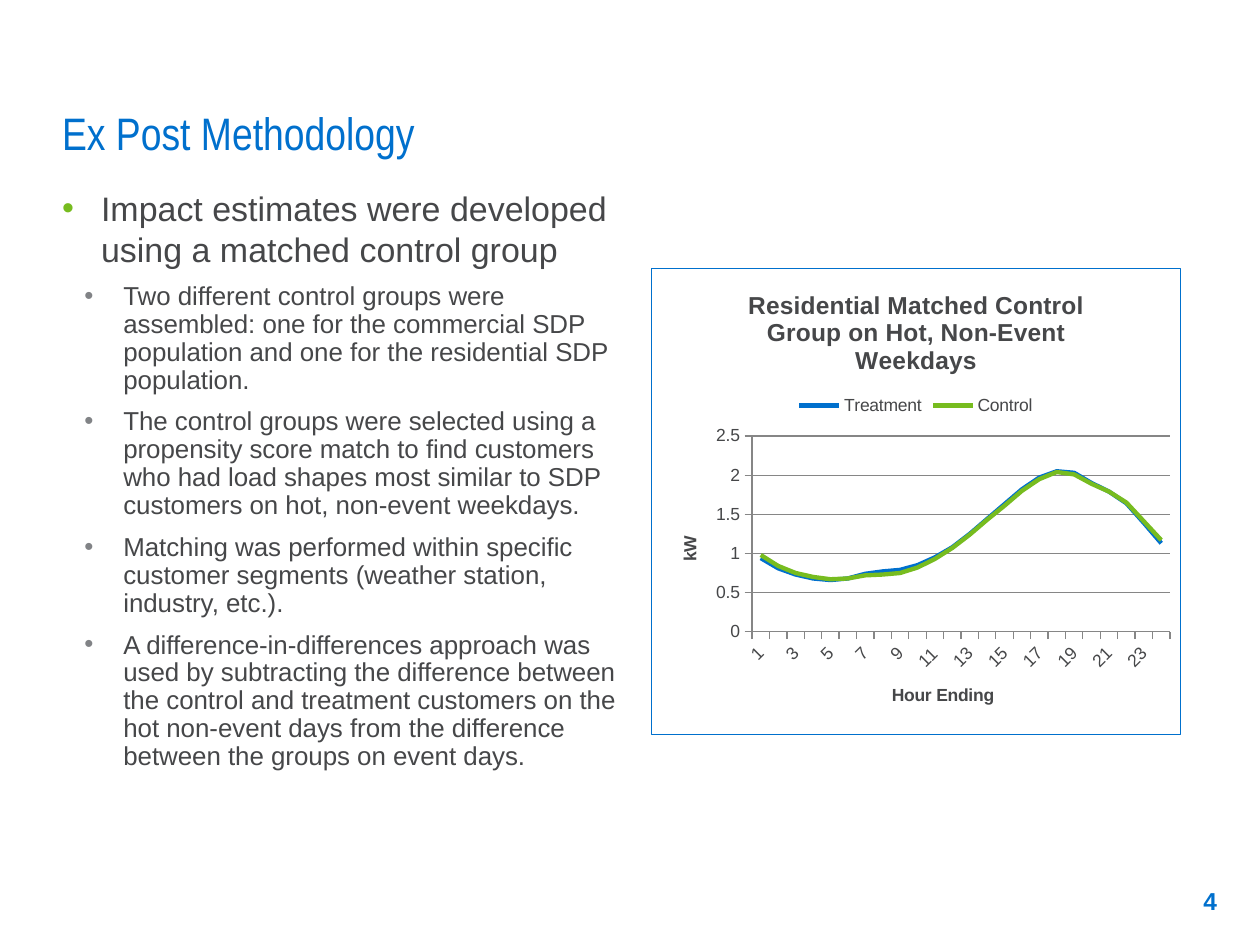
from lxml import etree
from pptx import Presentation
from pptx import util as u
from pptx.chart.data import CategoryChartData
from pptx.dml.color import RGBColor
from pptx.enum import chart as charts, text
from pptx.oxml import parse_xml
from pptx.oxml.ns import nsdecls, qn

Pt = u.Pt
COLORS = {"blue": "0070CD", "green": "77BC1F", "text": "464749",
          "bullet": "818386", "grid": "868686"}


def style(font, size, color, name="Arial", bold=False):
    font.size, font.name, font.bold = Pt(size), name, bold
    font.color.rgb = RGBColor.from_string(COLORS[color])


def add_box(left, top, width, height, inset, anchor):
    """Add a wrapping text box and return its text frame."""
    frame = slide.shapes.add_textbox(Pt(left), Pt(top), Pt(width), Pt(height)).text_frame
    frame.word_wrap = True
    frame.margin_left, frame.margin_right = Pt(inset), Pt(7.2)
    frame.vertical_anchor = anchor
    return frame


deck = Presentation()
deck.slide_width, deck.slide_height = Pt(720), Pt(540)
slide = deck.slides.add_slide(deck.slide_layouts[6])

# Title and page number
title = add_box(35.5, 41, 649, 53.5, 0, text.MSO_ANCHOR.BOTTOM)
span = title.paragraphs[0].add_run()
span.text = "Ex Post Methodology"
style(span.font, 26, "blue", "Arial Narrow")

number = add_box(652, 500.5, 50.5, 28.5, 7.2, text.MSO_ANCHOR.MIDDLE)
number.paragraphs[0].alignment = text.PP_ALIGN.RIGHT
span = number.paragraphs[0].add_run()
span.text = "4"
style(span.font, 14, "blue", bold=True)

# Bulleted text
bullets = [
    (0, "Impact estimates were developed using a matched control group"),
    (1, "Two different control groups were assembled: one for the commercial SDP "
        "population and one for the residential SDP population."),
    (1, "The control groups were selected using a propensity score match to find customers "
        "who had load shapes most similar to SDP customers on hot, non-event weekdays."),
    (1, "Matching was performed within specific customer segments "
        "(weather station, industry, etc.)."),
    (1, "A difference-in-differences approach was used by subtracting the difference between "
        "the control and treatment customers on the hot non-event days from the difference "
        "between the groups on event days."),
]
# Size, left margin, line spacing, space before and bullet colour of each level
levels = [(19.4, 22.3, 1.0, 0, "green"), (14.8, 35, 0.9, 5.3, "bullet")]

body = add_box(35.5, 103.7, 324, 378.7, 0, text.MSO_ANCHOR.TOP)
for index, (level, words) in enumerate(bullets):
    size, margin, spacing, before, bullet_color = levels[level]
    para = body.add_paragraph() if index else body.paragraphs[0]
    para.level = level
    para.line_spacing = spacing
    para.space_before, para.space_after = Pt(before), Pt(2.6)
    props = para._p.get_or_add_pPr()
    props.set("marL", str(Pt(margin)))
    props.set("indent", str(Pt(-22.3)))
    color = etree.SubElement(props, qn("a:buClr"))
    etree.SubElement(color, qn("a:srgbClr"), val=COLORS[bullet_color])
    etree.SubElement(props, qn("a:buFont"), typeface="Arial")
    etree.SubElement(props, qn("a:buChar"), char="•")
    span = para.add_run()
    span.text = words
    style(span.font, size, "text")

# Load chart
loads = {
    "Treatment": ("blue", [0.94, 0.81, 0.73, 0.68, 0.66, 0.68, 0.74, 0.77, 0.79, 0.85, 0.95, 1.08,
                           1.25, 1.44, 1.63, 1.82, 1.97, 2.05, 2.03, 1.9, 1.79, 1.64, 1.39, 1.13]),
    "Control": ("green", [0.98, 0.84, 0.75, 0.7, 0.67, 0.68, 0.72, 0.73, 0.75, 0.82, 0.93, 1.07,
                          1.24, 1.43, 1.61, 1.8, 1.95, 2.04, 2.01, 1.89, 1.79, 1.65, 1.41, 1.17]),
}
data = CategoryChartData()
data.categories = [str(hour) for hour in range(1, 25)]
for name, (color, values) in loads.items():
    data.add_series(name, values)
chart = slide.shapes.add_chart(charts.XL_CHART_TYPE.LINE, Pt(372), Pt(153),
                               Pt(303), Pt(267), data).chart
style(chart.font, 10, "text")
for series in chart.plots[0].series:
    series.smooth = False
    series.marker.style = charts.XL_MARKER_STYLE.NONE
    series.format.line.width = Pt(2.5)
    series.format.line.color.rgb = RGBColor.from_string(COLORS[loads[series.name][0]])
chart.plots[0].vary_by_categories = False

chart.has_legend = True
chart.legend.position = charts.XL_LEGEND_POSITION.TOP
chart.legend.include_in_layout = False

hours, power = chart.category_axis, chart.value_axis
power.minimum_scale, power.maximum_scale, power.major_unit = 0, 2.5, 0.5
power.has_major_gridlines = True
power.tick_labels.number_format = "General"
power.tick_labels.number_format_is_linked = False
for line in (hours.format.line, power.format.line, power.major_gridlines.format.line):
    line.width = Pt(0.75)
    line.color.rgb = RGBColor.from_string(COLORS["grid"])

headings = [(chart, "Residential Matched Control Group on Hot, Non-Event Weekdays", 14),
            (hours, "Hour Ending", 10), (power, "kW", 10)]
for owner, words, size in headings:
    frame = (owner.chart_title if owner is chart else owner.axis_title).text_frame
    span = frame.paragraphs[0].add_run()
    span.text = words
    style(span.font, size, "text", bold=True)
for axis in (hours, power):
    axis.major_tick_mark = charts.XL_TICK_MARK.OUTSIDE
    axis.minor_tick_mark = charts.XL_TICK_MARK.NONE
    style(axis.tick_labels.font, 10, "text")

# Slanted labels on every second hour
hours._element.find(qn("c:txPr")).find(qn("a:bodyPr")).set("rot", "-2700000")
skip = parse_xml(f'<c:tickLblSkip {nsdecls("c")} val="2"/>')
hours._element.find(qn("c:noMultiLvlLbl")).addprevious(skip)

# Fixed plot area and chart border
plot_area = chart._chartSpace.chart.plotArea
for old in plot_area.findall(qn("c:layout")):
    plot_area.remove(old)
layout = parse_xml(f'<c:layout {nsdecls("c")}><c:manualLayout><c:layoutTarget val="inner"/>'
                   '<c:xMode val="edge"/><c:yMode val="edge"/><c:x val="0.19"/><c:y val="0.36"/>'
                   '<c:w val="0.79"/><c:h val="0.42"/></c:manualLayout></c:layout>')
plot_area.insert(0, layout)
border = parse_xml(f'<c:spPr {nsdecls("c", "a")}><a:noFill/><a:ln w="{Pt(0.75)}"><a:solidFill>'
                   f'<a:srgbClr val="{COLORS["blue"]}"/></a:solidFill></a:ln></c:spPr>')
chart._chartSpace.chart.addnext(border)

deck.save("out.pptx")
